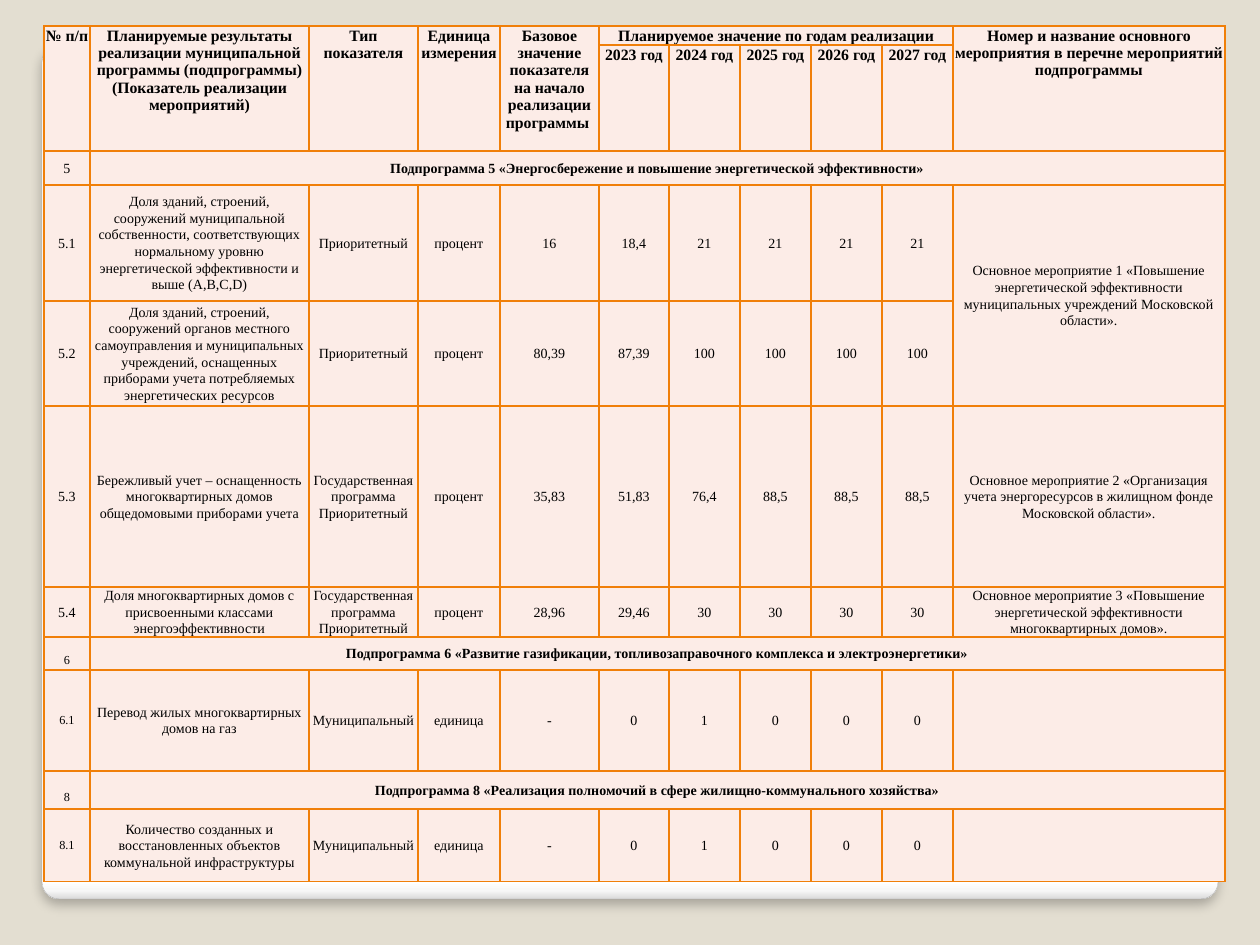
import pptx
import pptx.dml.color
import pptx.enum.shapes
import pptx.enum.text
import pptx.oxml.ns
import pptx.util
import lxml.etree

RGBColor = pptx.dml.color.RGBColor
BACKGROUND = RGBColor(0xE3, 0xDE, 0xD1)
CARD_LINE = RGBColor(0xA4, 0xA4, 0xA4)
CARD_STOPS = [
    (0, RGBColor(0xFF, 0xFF, 0xFF)),
    (98, RGBColor(0xFF, 0xFF, 0xFF)),
    (99, RGBColor(0xF7, 0xF7, 0xF7)),
    (100, RGBColor(0xDA, 0xDA, 0xDA)),
]
BLACK = RGBColor(0, 0, 0)
CELL_FILL = RGBColor(0xFC, 0xEC, 0xE7)
BORDER = RGBColor(0xF0, 0x7F, 0x09)
FONT = "Times New Roman"

COLUMN_WIDTHS = [46, 219, 109, 82, 99, 70, 71, 71, 71, 71, 272]
ROW_HEIGHTS = [19, 106, 34, 116, 105, 181, 50, 33, 101, 38, 73]
TABLE_LEFT, TABLE_TOP = 44, 26
HEADER_ROWS = 2
SECTION_ROWS = (2, 7, 9)
LOW_NUMBER_ROWS = (7, 9)
SMALL_NUMBER_FROM = 7
LOW_NUMBER_OFFSET = 14

STATE = "Государственная программа\nПриоритетный"
ROWS = [
    ["№ п/п",
     "Планируемые результаты реализации муниципальной программы (подпрограммы) "
     "(Показатель реализации мероприятий)",
     "Тип показателя", "Единица измерения",
     "Базовое значение показателя на начало реализации программы ",
     "Планируемое значение по годам реализации", "", "", "", "",
     "Номер и название основного мероприятия в перечне мероприятий подпрограммы"],
    ["", "", "", "", "", "2023 год", "2024 год", "2025 год", "2026 год", "2027 год", ""],
    ["5", "Подпрограмма 5 «Энергосбережение и повышение энергетической эффективности»"],
    ["5.1",
     "Доля зданий, строений, сооружений муниципальной собственности, соответствующих "
     "нормальному уровню энергетической эффективности и выше (А,В,С,D)",
     "Приоритетный", "процент", "16", "18,4", "21", "21", "21", "21",
     "Основное мероприятие 1 «Повышение энергетической эффективности муниципальных "
     "учреждений Московской области»."],
    ["5.2",
     "Доля зданий, строений, сооружений органов местного самоуправления и муниципальных "
     "учреждений, оснащенных приборами учета потребляемых энергетических ресурсов",
     "Приоритетный", "процент", "80,39", "87,39", "100", "100", "100", "100", ""],
    ["5.3",
     "Бережливый учет – оснащенность многоквартирных домов общедомовыми приборами учета",
     STATE, "процент", "35,83", "51,83", "76,4", "88,5", "88,5", "88,5",
     "Основное мероприятие 2 «Организация учета энергоресурсов в жилищном фонде "
     "Московской области»."],
    ["5.4", "Доля многоквартирных домов с присвоенными классами энергоэффективности",
     STATE, "процент", "28,96", "29,46", "30", "30", "30", "30",
     "Основное мероприятие 3 «Повышение энергетической эффективности "
     "многоквартирных домов»."],
    ["6", "Подпрограмма 6 «Развитие газификации, топливозаправочного комплекса "
     "и электроэнергетики»"],
    ["6.1", "Перевод жилых многоквартирных домов на газ",
     "Муниципальный", "единица", "-", "0", "1", "0", "0", "0", ""],
    ["8", "Подпрограмма 8 «Реализация полномочий в сфере жилищно-коммунального хозяйства»"],
    ["8.1", "Количество созданных и восстановленных объектов коммунальной инфраструктуры",
     "Муниципальный", "единица", "-", "0", "1", "0", "0", "0", ""],
]
MERGES = [((0, column), (1, column)) for column in (0, 1, 2, 3, 4, 10)]
MERGES += [((0, 5), (0, 9)), ((3, 10), (4, 10))]
MERGES += [((row, 1), (row, 10)) for row in SECTION_ROWS]


def px(value):
    return pptx.util.Emu(round(value * 914400 / 126))


def add_element(parent, tag, **attributes):
    element = lxml.etree.SubElement(parent, pptx.oxml.ns.qn(tag))
    for name, value in attributes.items():
        element.set(name, str(value))
    return element


def add_card(slide):
    card = slide.shapes.add_shape(
        pptx.enum.shapes.MSO_SHAPE.ROUNDED_RECTANGLE, px(42), px(45), px(1176), px(854))
    card.adjustments[0] = 0.02
    card.fill.gradient()
    card.fill.gradient_angle = 270
    stops = card.element.spPr.find(".//" + pptx.oxml.ns.qn("a:gsLst"))
    for stop in list(stops):
        stops.remove(stop)
    for position, color in CARD_STOPS:
        stop = add_element(stops, "a:gs", pos=position * 1000)
        add_element(stop, "a:srgbClr", val=color)
    card.line.color.rgb = CARD_LINE
    card.line.width = pptx.util.Pt(0.16)
    card.shadow.inherit = False
    effects = card.element.spPr.find(pptx.oxml.ns.qn("a:effectLst"))
    shadow = add_element(effects, "a:outerShdw", blurRad=pptx.util.Pt(6),
                         dist=pptx.util.Pt(4), dir=90 * 60000, rotWithShape=0)
    add_element(add_element(shadow, "a:srgbClr", val=BLACK), "a:alpha", val=25000)


def format_cell(cell, row, column):
    properties = cell._tc.get_or_add_tcPr()
    for side in ("a:lnL", "a:lnR", "a:lnT", "a:lnB"):
        line = add_element(properties, side, w=pptx.util.Pt(1))
        add_element(add_element(line, "a:solidFill"), "a:srgbClr", val=BORDER)
    cell.fill.solid()
    cell.fill.fore_color.rgb = CELL_FILL
    header = row < HEADER_ROWS
    cell.margin_left = cell.margin_right = px(1 if header else 2)
    cell.margin_top = px(1 if header else 0)
    cell.margin_bottom = 0
    cell.vertical_anchor = (pptx.enum.text.MSO_ANCHOR.TOP if header
                            else pptx.enum.text.MSO_ANCHOR.MIDDLE)
    if column == 0 and row in LOW_NUMBER_ROWS:
        cell.margin_top = px(LOW_NUMBER_OFFSET)


def write_cell(cell, text, row, column):
    header = row < HEADER_ROWS
    small = column == 0 and row >= SMALL_NUMBER_FROM
    size = 9 if header else 7 if small else 8
    frame = cell.text_frame
    for index, line in enumerate(text.split("\n")):
        paragraph = frame.paragraphs[0] if index == 0 else frame.add_paragraph()
        paragraph.alignment = pptx.enum.text.PP_ALIGN.CENTER
        if not header:
            paragraph.line_spacing = 1.07
        if not line:
            add_element(paragraph._p, "a:endParaRPr", sz=size * 100)
            continue
        run = paragraph.add_run()
        run.text = line
        run.font.name = FONT
        run.font.size = pptx.util.Pt(size)
        run.font.bold = header or (row in SECTION_ROWS and column > 0)
        run.font.color.rgb = BLACK


def add_indicator_table(slide):
    table = slide.shapes.add_table(
        len(ROW_HEIGHTS), len(COLUMN_WIDTHS), px(TABLE_LEFT), px(TABLE_TOP),
        px(sum(COLUMN_WIDTHS)), px(sum(ROW_HEIGHTS))).table
    table.first_row = False
    table.horz_banding = False
    for column, width in zip(table.columns, COLUMN_WIDTHS):
        column.width = px(width)
    for row, height in zip(table.rows, ROW_HEIGHTS):
        row.height = px(height)
    for row, texts in enumerate(ROWS):
        padded = texts + [""] * (len(COLUMN_WIDTHS) - len(texts))
        for column, text in enumerate(padded):
            cell = table.cell(row, column)
            format_cell(cell, row, column)
            write_cell(cell, text, row, column)
    for first, last in MERGES:
        table.cell(*first).merge(table.cell(*last))


def main():
    presentation = pptx.Presentation()
    presentation.slide_width = px(1260)
    presentation.slide_height = px(945)
    slide = presentation.slides.add_slide(presentation.slide_layouts[6])
    slide.background.fill.solid()
    slide.background.fill.fore_color.rgb = BACKGROUND
    add_card(slide)
    add_indicator_table(slide)
    presentation.save("out.pptx")


if __name__ == "__main__":
    main()
